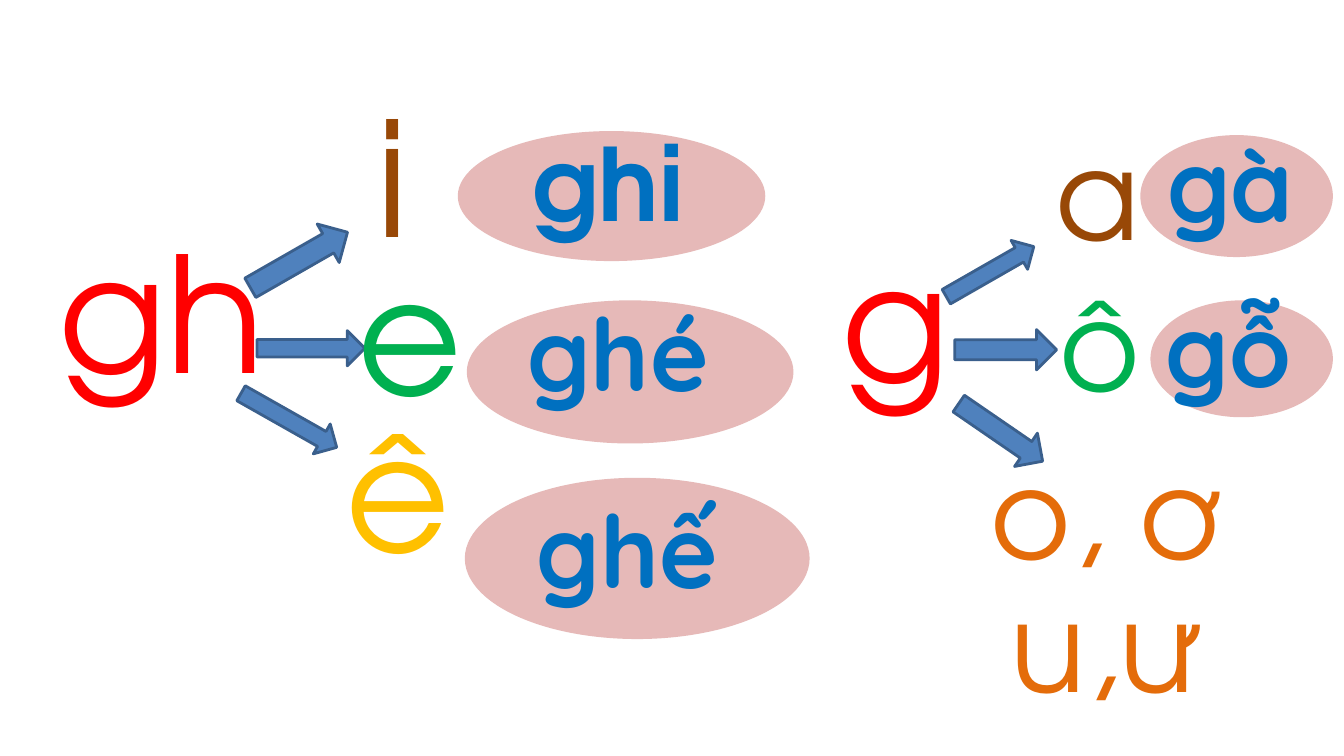
from pptx import Presentation
from pptx.dml.color import RGBColor
from pptx.enum.shapes import MSO_SHAPE
from pptx.enum.text import MSO_ANCHOR, MSO_AUTO_SIZE, PP_ALIGN
from pptx.util import Inches, Pt

OVAL, ARROW = MSO_SHAPE.OVAL, MSO_SHAPE.RIGHT_ARROW
TOP, MIDDLE = MSO_ANCHOR.TOP, MSO_ANCHOR.MIDDLE
LEFT, CENTER = PP_ALIGN.LEFT, PP_ALIGN.CENTER
GROW, FIXED = MSO_AUTO_SIZE.SHAPE_TO_FIT_TEXT, MSO_AUTO_SIZE.NONE

THEME = {
    "red": "FF0000", "brown": "984807", "green": "00B050",
    "yellow": "FFC000", "orange": "E46C0A", "blue": "0070C0",
    "pink": "E6B9B8", "arrow": "4F81BD", "arrow edge": "3A5F8C",
    "geometric": "TeX Gyre Adventor", "rounded": "Quicksand",
    "large": 115, "medium": 88, "word": 72, "edge": 2,
}

deck = Presentation()
deck.slide_width, deck.slide_height = Inches(13.33), Inches(7.5)
page = deck.slides.add_slide(deck.slide_layouts[6])

# Grid of 133.3 columns by 75 rows; every place is left, top, width, height
COLUMN, ROW = deck.slide_width / 133.3, deck.slide_height / 75


def on_grid(place):
    left, top, width, height = place
    return [round(n) for n in (left * COLUMN, top * ROW, width * COLUMN, height * ROW)]


def add_text(text, place, color, size="large", font="geometric", bold=False,
             align=CENTER, anchor=MIDDLE, spacing=0.9, fit=FIXED):
    box = page.shapes.add_textbox(*on_grid(place))
    frame = box.text_frame
    frame.word_wrap = True
    frame.auto_size = fit
    frame.vertical_anchor = anchor
    for index, line in enumerate(text.split("\n")):
        para = frame.add_paragraph() if index else frame.paragraphs[0]
        para.alignment = align
        para.line_spacing = spacing
        span = para.add_run()
        span.text = line
        span.font.name = THEME[font]
        span.font.size = Pt(THEME[size])
        span.font.bold = bold
        span.font.color.rgb = RGBColor.from_string(THEME[color])


# Ovals behind the syllables, then the arrows from each consonant to its vowels
ovals = [
    (45.4, 13, 30.5, 12.9), (46.3, 29.8, 32.4, 14.2), (46.1, 47.4, 34.2, 16),
    (113.1, 13.4, 19.1, 12.1), (114.1, 29.8, 18.1, 11.6),
]
arrows = [
    ((24.1, 23.6, 11.1, 4.4), 330.2),
    ((25.5, 32.8, 10.7, 3.5), 0),
    ((23.2, 40, 10.9, 3.4), 29.5),
    ((93.2, 25.3, 10, 3.3), 330.2),
    ((94.7, 32.7, 10.1, 4), 0),
    ((94.2, 40.9, 10.1, 4), 34.5),
]

for place in ovals:
    oval = page.shapes.add_shape(OVAL, *on_grid(place))
    oval.shadow.inherit = False
    oval.fill.solid()
    oval.fill.fore_color.rgb = RGBColor.from_string(THEME["pink"])
    oval.line.fill.background()

# Consonants
add_text("gh", (-2.1, 27, 36.3, 9.8), "red")
add_text("g", (70.7, 27.9, 36.3, 9.8), "red")

for place, angle in arrows:
    arrow = page.shapes.add_shape(ARROW, *on_grid(place))
    arrow.shadow.inherit = False
    arrow.rotation = angle
    arrow.fill.solid()
    arrow.fill.fore_color.rgb = RGBColor.from_string(THEME["arrow"])
    arrow.line.color.rgb = RGBColor.from_string(THEME["arrow edge"])
    arrow.line.width = Pt(THEME["edge"])

# Vowels
vowels = [
    ("i", 30.2, 13.5, "brown", "large"),
    ("e", 31.9, 29.2, "green", "large"),
    ("ê", 30.8, 44.7, "yellow", "large"),
    ("a", 100.2, 15, "brown", "medium"),
    ("ô", 100.4, 30, "green", "medium"),
]
for vowel, left, top, color, size in vowels:
    add_text(vowel, (left, top, 17.4, 9.8), color, size=size)
add_text("o, ơ\nu,ư", (95.1, 44.2, 29.4, 27.8), "orange", size="medium")

# Syllables
syllables = [
    ("ghi", 51.8, 11.5, 24.9, "geometric"),
    ("ghé", 51.3, 28.3, 22.4, "rounded"),
    ("ghế", 52.2, 47.9, 24.9, "rounded"),
    ("gà", 114.8, 11.6, 24.9, "rounded"),
    ("gỗ", 114.6, 27.9, 16.3, "rounded"),
]
for syllable, left, top, width, font in syllables:
    add_text(syllable, (left, top, width, 13.1), "blue", size="word", font=font,
             bold=True, align=LEFT, anchor=TOP, spacing=1.0, fit=GROW)

deck.save("out.pptx")
